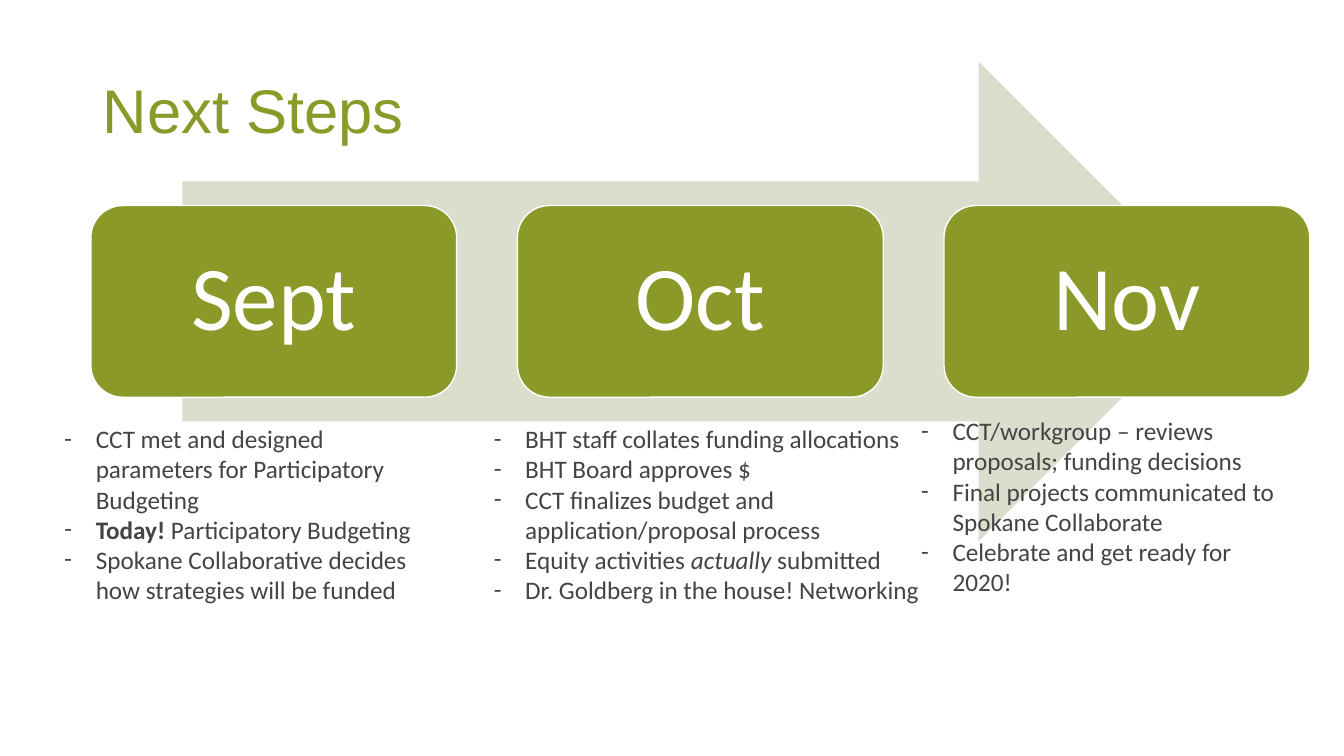
from lxml.etree import SubElement
from pptx import Presentation
from pptx.dml.color import RGBColor
from pptx.enum.shapes import MSO_SHAPE
from pptx.enum.text import MSO_ANCHOR, MSO_AUTO_SIZE, PP_ALIGN
from pptx.oxml.ns import qn
from pptx.util import Cm, Pt

COLOURS = {
    "green": "8B9928",
    "pale green": "DADECD",
    "white": "FFFFFF",
    "text": "444444",
}
COMPARISON_LAYOUT = 4
MONTHS = ["Sept", "Oct", "Nov"]
CARD_LEFT, CARD_STEP = 2.29, 10.75

# Placeholder index, (left, top, width, height) in cm, and items;
# an item is a list of (words, style) runs.
STEPS = [
    (1, (1.37, 10.54, 9.45, 6.4), [
        [("CCT met and designed parameters for Participatory Budgeting", "")],
        [("Today! ", "bold"), ("Participatory Budgeting", "")],
        [("Spokane Collaborative decides how strategies will be funded", "")],
    ]),
    (2, (12.19, 10.54, 11.43, 4.88), [
        [("BHT staff collates funding allocations", "")],
        [("BHT Board approves $", "")],
        [("CCT finalizes budget and application/proposal process", "")],
        [("Equity activities ", ""), ("actually", "italic"), (" submitted", "")],
        [("Dr. Goldberg in the house! Networking", "")],
    ]),
    (4, (22.96, 10.34, 9.45, 4.88), [
        [("CCT/workgroup – reviews proposals; funding decisions", "")],
        [("Final projects communicated to Spokane Collaborate", "")],
        [("Celebrate and get ready for 2020!", "")],
    ]),
]


def colour(name):
    return RGBColor.from_string(COLOURS[name])


def place(placeholder, box):
    placeholder.left, placeholder.top, placeholder.width, placeholder.height = map(Cm, box)


def set_font(paragraph, name, size, colour_name):
    font = paragraph.font
    font.name, font.size, font.bold = name, Pt(size), False
    font.color.rgb = colour(colour_name)


def set_title(title):
    place(title, (2.33, 1.02, 29.21, 3.68))
    title.text_frame.text = "Next Steps"
    title.text_frame.vertical_anchor = MSO_ANCHOR.MIDDLE
    heading = title.text_frame.paragraphs[0]
    heading.alignment = PP_ALIGN.LEFT
    heading.line_spacing = 0.9
    set_font(heading, "Arial", 44, "green")


def add_filled_shape(slide, preset, box, fill):
    shape = slide.shapes.add_shape(preset, *map(Cm, box))
    shape.shadow.inherit = False
    shape.fill.solid()
    shape.fill.fore_color.rgb = colour(fill)
    shape.line.fill.background()
    return shape


def add_month_card(slide, month, left):
    card = add_filled_shape(slide, MSO_SHAPE.ROUNDED_RECTANGLE, (left, 5.18, 9.22, 4.83), "green")
    card.line.color.rgb = colour("white")
    card.line.width = Pt(1)
    frame = card.text_frame
    frame.margin_left = frame.margin_right = frame.margin_top = frame.margin_bottom = Cm(0.69)
    frame.vertical_anchor = MSO_ANCHOR.MIDDLE
    frame.text = month
    label = frame.paragraphs[0]
    label.alignment = PP_ALIGN.CENTER
    label.line_spacing = 0.9
    set_font(label, "Calibri", 65, "white")


def add_dash(paragraph):
    properties = paragraph._p.get_or_add_pPr()
    properties.set("marL", str(Cm(0.79)))
    properties.set("indent", str(-Cm(0.79)))
    SubElement(properties, qn("a:buFont"), typeface="Calibri")
    SubElement(properties, qn("a:buChar"), char="-")


def fill_list(body, box, items):
    place(body, box)
    frame = body.text_frame
    frame.word_wrap = True
    frame.vertical_anchor = MSO_ANCHOR.TOP
    frame.auto_size = MSO_AUTO_SIZE.SHAPE_TO_FIT_TEXT
    for number, item in enumerate(items):
        paragraph = frame.add_paragraph() if number else frame.paragraphs[0]
        paragraph.space_before = Pt(0)
        add_dash(paragraph)
        set_font(paragraph, "Calibri", 18, "text")
        for words, style in item:
            run = paragraph.add_run()
            run.text = words
            if style == "bold":
                run.font.bold = True
            elif style == "italic":
                run.font.italic = True


def bring_to_front(shape):
    shape.element.getparent().append(shape.element)


def main():
    deck = Presentation()
    deck.slide_width, deck.slide_height = Cm(33.87), Cm(19.05)
    slide = deck.slides.add_slide(deck.slide_layouts[COMPARISON_LAYOUT])
    set_title(slide.shapes.title)
    add_filled_shape(slide, MSO_SHAPE.RIGHT_ARROW, (4.6, 1.55, 26.11, 12.09), "pale green")
    for position, month in enumerate(MONTHS):
        add_month_card(slide, month, CARD_LEFT + position * CARD_STEP)

    bodies = {body.placeholder_format.idx: body for body in slide.placeholders}
    for index, box, items in STEPS:
        fill_list(bodies[index], box, items)
        bring_to_front(bodies[index])
    unused = bodies[3].element
    unused.getparent().remove(unused)
    deck.save("out.pptx")


if __name__ == "__main__":
    main()
